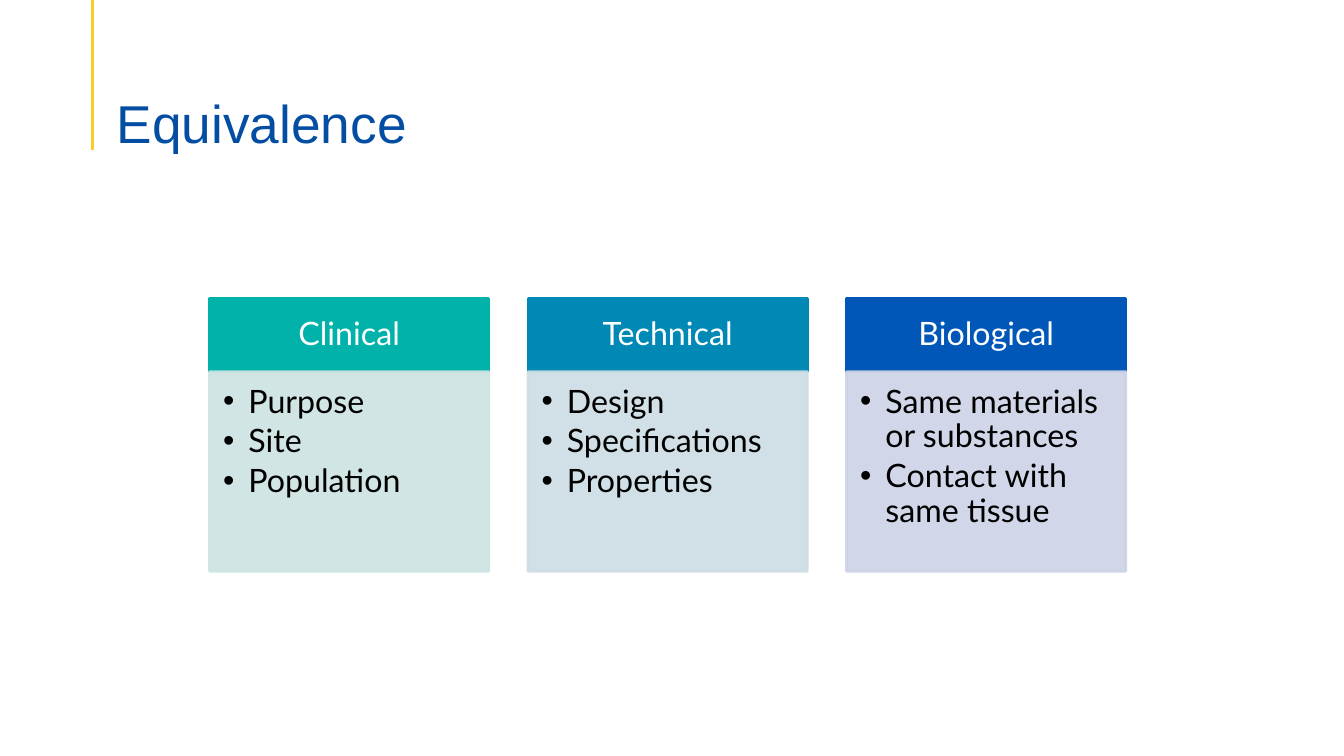
from dataclasses import dataclass

from lxml import etree
from pptx import Presentation
from pptx.dml.color import RGBColor
from pptx.enum import shapes, text
from pptx.oxml import ns
from pptx.util import Pt

COLUMN_LEFT, COLUMN_PITCH, COLUMN_WIDTH = 149.76, 227.5, 199.44
HEADER_TOP, HEADER_HEIGHT = 213.12, 52.2
BODY_TOP, BODY_HEIGHT = 265.5, 142.56
BULLET_INDENT = 18
BODY_OPACITY = 90


@dataclass
class Column:
    heading: str
    points: list[str]
    header_color: str
    body_color: str


COLUMNS = [
    Column("Clinical", ["Purpose", "Site", "Population"], "00B2AA", "CCE4E2"),
    Column("Technical", ["Design", "Specifications", "Properties"], "0089B5", "CCDDE5"),
    Column("Biological", ["Same materials or substances", "Contact with same tissue"],
           "0057B8", "CCD2E6"),
]


def rgb(value: str) -> RGBColor:
    return RGBColor.from_string(value)


def set_frame(frame, anchor, left: float, top: float, right: float, bottom: float) -> None:
    frame.word_wrap = True
    frame.vertical_anchor = anchor
    frame.margin_left, frame.margin_top = Pt(left), Pt(top)
    frame.margin_right, frame.margin_bottom = Pt(right), Pt(bottom)


def style_paragraph(para, font: str, size: float, color: str, align, after: float = 0) -> None:
    para.alignment = align
    para.line_spacing = 0.9
    para.space_after = Pt(after)
    for span in para.runs:
        span.font.name = font
        span.font.size = Pt(size)
        span.font.color.rgb = rgb(color)


def add_bullet(para) -> None:
    properties = para._p.get_or_add_pPr()
    properties.set("marL", str(Pt(BULLET_INDENT)))
    properties.set("indent", str(-Pt(BULLET_INDENT)))
    etree.SubElement(properties, ns.qn("a:buFont")).set("typeface", "Arial")
    etree.SubElement(properties, ns.qn("a:buChar")).set("char", "•")


def add_panel(slide, left: float, top: float, height: float, color: str, opacity: int = 100):
    panel = slide.shapes.add_shape(shapes.MSO_SHAPE.RECTANGLE, Pt(left), Pt(top),
                                   Pt(COLUMN_WIDTH), Pt(height))
    panel.shadow.inherit = False
    panel.fill.solid()
    panel.fill.fore_color.rgb = rgb(color)
    panel.line.color.rgb = rgb(color)
    panel.line.width = Pt(2)
    if opacity < 100:
        for tint in panel._element.spPr.iter(ns.qn("a:srgbClr")):
            etree.SubElement(tint, ns.qn("a:alpha")).set("val", str(opacity * 1000))
    return panel


def add_column(slide, column: Column, left: float) -> None:
    header = add_panel(slide, left, HEADER_TOP, HEADER_HEIGHT, column.header_color)
    set_frame(header.text_frame, text.MSO_ANCHOR.MIDDLE, 13, 7.4, 13, 7.4)
    header.text_frame.text = column.heading
    style_paragraph(header.text_frame.paragraphs[0], "Lato", 23, "FFFFFF",
                    text.PP_ALIGN.CENTER)

    body = add_panel(slide, left, BODY_TOP, BODY_HEIGHT, column.body_color, BODY_OPACITY)
    set_frame(body.text_frame, text.MSO_ANCHOR.TOP, 9.66, 9.66, 13, 14.5)
    body.text_frame.text = "\n".join(column.points)
    for para in body.text_frame.paragraphs:
        add_bullet(para)
        style_paragraph(para, "Lato", 23, "000000", text.PP_ALIGN.LEFT, after=3.45)


def add_title(slide, title: str) -> None:
    box = slide.shapes.add_textbox(Pt(76.3), Pt(37.44), Pt(762.5), Pt(73.44))
    set_frame(box.text_frame, text.MSO_ANCHOR.BOTTOM, 7.2, 3.6, 7.2, 0)
    box.text_frame.text = title
    style_paragraph(box.text_frame.paragraphs[0], "Arial", 38, "034EA2", text.PP_ALIGN.LEFT)


def add_accent_line(slide) -> None:
    accent = slide.shapes.add_connector(shapes.MSO_CONNECTOR.STRAIGHT,
                                        Pt(66.24), Pt(0), Pt(66.24), Pt(107.3))
    accent.line.color.rgb = rgb("F8CC29")
    accent.line.width = Pt(2.25)
    etree.SubElement(accent._element.spPr, ns.qn("a:effectLst"))


def main() -> None:
    deck = Presentation()
    deck.slide_width, deck.slide_height = Pt(960), Pt(540)
    slide = deck.slides.add_slide(deck.slide_layouts[6])
    add_accent_line(slide)
    add_title(slide, "Equivalence")
    for index, column in enumerate(COLUMNS):
        add_column(slide, column, COLUMN_LEFT + index * COLUMN_PITCH)
    deck.save("out.pptx")


if __name__ == "__main__":
    main()
